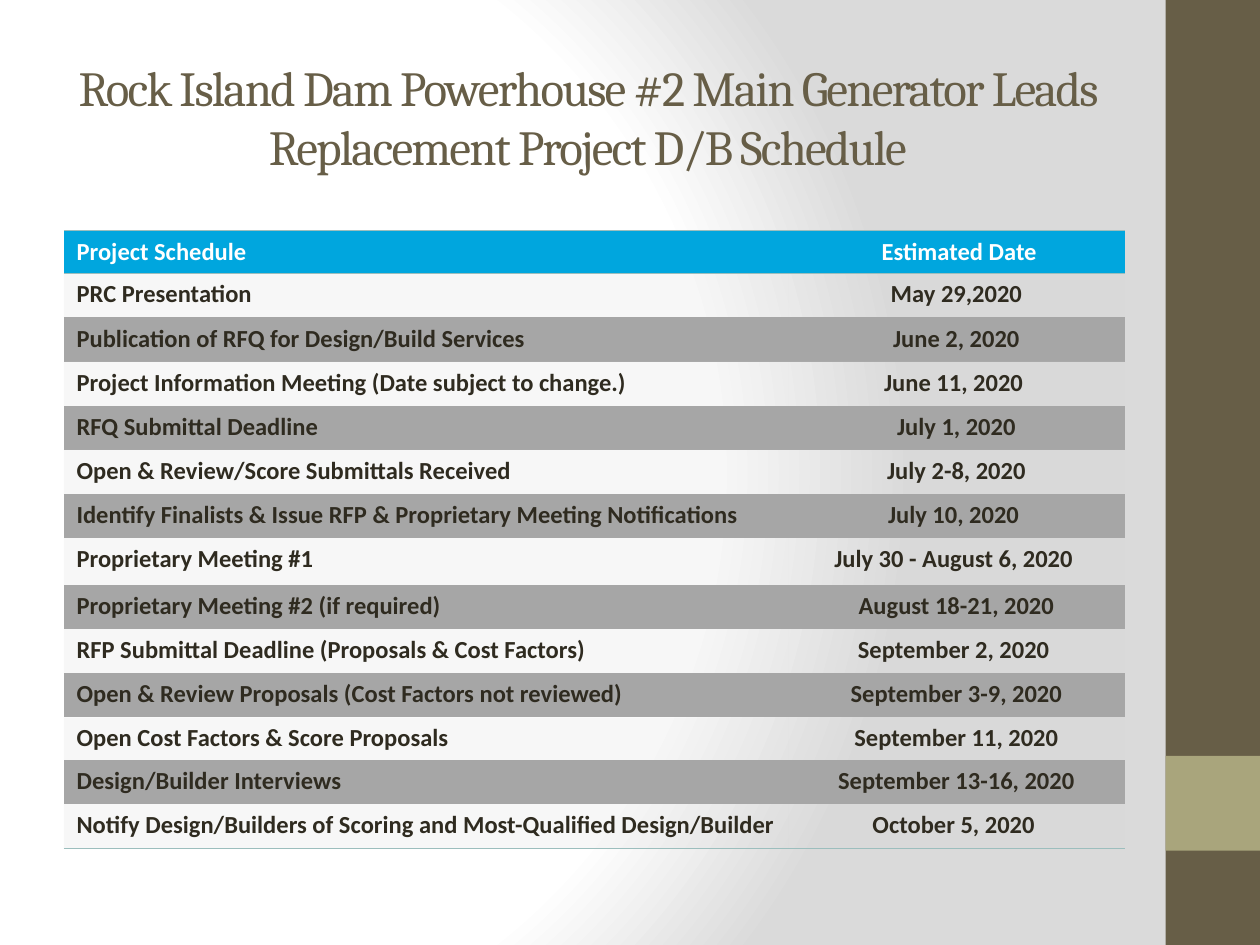
from pptx import Presentation
from pptx import util as u
from pptx.dml.color import RGBColor
from pptx.enum import shapes, text
from pptx.oxml import parse_xml
from pptx.oxml.ns import nsdecls, qn

TITLE = "Rock Island Dam Powerhouse #2 Main Generator Leads Replacement Project D/B Schedule"
SCHEDULE = [
    ("Project Schedule", " Estimated Date"),
    ("PRC Presentation", "May 29,2020"),
    ("Publication of RFQ for Design/Build Services", "June 2, 2020"),
    ("Project Information Meeting (Date subject to change.)", "June 11, 2020 "),
    ("RFQ Submittal Deadline", "July 1, 2020"),
    ("Open & Review/Score Submittals Received", "July 2-8, 2020"),
    ("Identify Finalists & Issue RFP & Proprietary Meeting Notifications", "July 10, 2020 "),
    ("Proprietary Meeting #1", "July 30 - August 6, 2020 "),
    ("Proprietary Meeting #2 (if required)", "August 18-21, 2020"),
    ("RFP Submittal Deadline (Proposals & Cost Factors)", "September 2, 2020 "),
    ("Open & Review Proposals (Cost Factors not reviewed)", "September 3-9, 2020"),
    ("Open Cost Factors & Score Proposals", "September 11, 2020"),
    ("Design/Builder Interviews", "September 13-16, 2020"),
    ("Notify Design/Builders of Scoring and Most-Qualified Design/Builder", "October 5, 2020 "),
]
THEME = {
    "brown": "675E47", "olive": "A9A57C", "header": "00A6DE", "band": "A6A6A6",
    "light": "D9D9D9", "light_alpha": 20, "rule": "9CBEBD", "ink": "2F2B20", "white": "FFFFFF",
    "gradient": [(0, "FFFFFF"), (75, "FFFFFF"), (100, "DADADA")],
    "title_font": "Cambria", "title_size": 28, "table_font": "Calibri", "table_size": 14,
}
SIDEBAR = [("brown", 0, 19.05), ("olive", 15.24, 1.91)]
COLUMN_WIDTHS = (14.6, 6.78)
ROW_HEIGHT = 0.89
SPECIAL_HEIGHTS = {0: 0.86, 7: 0.94, 11: 0.86}
PLAIN_STYLE = "{2D5ABB26-0587-4C30-8999-92F81FD0307C}"


def apply(target, values):
    for name, value in values.items():
        setattr(target, name, value)


def color(name):
    return RGBColor.from_string(THEME[name])


def write(frame, words, alignment, ink, **font):
    paragraph = frame.paragraphs[0]
    paragraph.alignment = alignment
    run = paragraph.add_run()
    run.text = words
    apply(run.font, font)
    run.font.color.rgb = color(ink)
    return run


def set_background(slide):
    slide.background.fill.gradient()
    gradient = slide.element.find(".//" + qn("a:gradFill"))
    stops = "".join(
        f'<a:gs pos="{position * 1000}"><a:srgbClr val="{value}"/></a:gs>'
        for position, value in THEME["gradient"])
    gradient.getparent().replace(gradient, parse_xml(
        f'<a:gradFill {nsdecls("a")} rotWithShape="1"><a:gsLst>{stops}</a:gsLst><a:path path="circle">'
        '<a:fillToRect l="20000" t="50000" r="100000" b="50000"/></a:path></a:gradFill>'))


def add_sidebar(slide):
    for fill, top, height in SIDEBAR:
        shape = slide.shapes.add_shape(
            shapes.MSO_SHAPE.RECTANGLE, u.Cm(23.5), u.Cm(top), u.Cm(1.9), u.Cm(height))
        shape.shadow.inherit = False
        shape.fill.solid()
        shape.fill.fore_color.rgb = color(fill)
        shape.line.fill.background()


def add_title(slide):
    frame = slide.shapes.add_textbox(u.Cm(1.27), u.Cm(0.76), u.Cm(21.16), u.Cm(3.18)).text_frame
    apply(frame, {"word_wrap": True, "vertical_anchor": text.MSO_ANCHOR.MIDDLE})
    run = write(frame, TITLE, text.PP_ALIGN.CENTER, "brown",
                name=THEME["title_font"], size=u.Pt(THEME["title_size"]))
    run.font._element.set("spc", "-100")


def fill_cell(cell, fill):
    cell.fill.solid()
    cell.fill.fore_color.rgb = color(fill)
    if fill == "light":
        solid = cell._tc.tcPr.find(".//" + qn("a:srgbClr"))
        solid.append(parse_xml(f'<a:alpha {nsdecls("a")} val="{THEME["light_alpha"] * 1000}"/>'))


def add_rules(cell, sides):
    for index, side in enumerate(sides):
        cell._tc.tcPr.insert(index, parse_xml(
            f'<a:ln{side} {nsdecls("a")} w="{u.Pt(1)}"><a:solidFill>'
            f'<a:srgbClr val="{THEME["rule"]}"/></a:solidFill></a:ln{side}>'))


def add_schedule(slide):
    last = len(SCHEDULE) - 1
    heights = [SPECIAL_HEIGHTS.get(row, ROW_HEIGHT) for row in range(len(SCHEDULE))]
    frame = slide.shapes.add_table(
        len(SCHEDULE), len(COLUMN_WIDTHS), u.Cm(1.29), u.Cm(4.65),
        u.Cm(sum(COLUMN_WIDTHS)), u.Cm(sum(heights)))
    table = frame.table
    table._tbl.tblPr.find(qn("a:tableStyleId")).text = PLAIN_STYLE
    for column, width in zip(table.columns, COLUMN_WIDTHS):
        column.width = u.Cm(width)
    for index, entry in enumerate(SCHEDULE):
        table.rows[index].height = u.Cm(heights[index])
        fill = "header" if index == 0 else "light" if index % 2 else "band"
        sides = {0: "TB", last: "B"}.get(index, "")
        for cell, words, alignment in zip(
                table.rows[index].cells, entry, (text.PP_ALIGN.LEFT, text.PP_ALIGN.CENTER)):
            fill_cell(cell, fill)
            add_rules(cell, sides)
            write(cell.text_frame, words, alignment, "ink" if index else "white",
                  name=THEME["table_font"], size=u.Pt(THEME["table_size"]), bold=True)


def main():
    """Build the project schedule slide."""
    presentation = Presentation()
    apply(presentation, {"slide_width": u.Cm(25.4), "slide_height": u.Cm(19.05)})
    slide = presentation.slides.add_slide(presentation.slide_layouts[6])
    set_background(slide)
    add_sidebar(slide)
    add_title(slide)
    add_schedule(slide)
    presentation.save("out.pptx")


if __name__ == "__main__":
    main()
